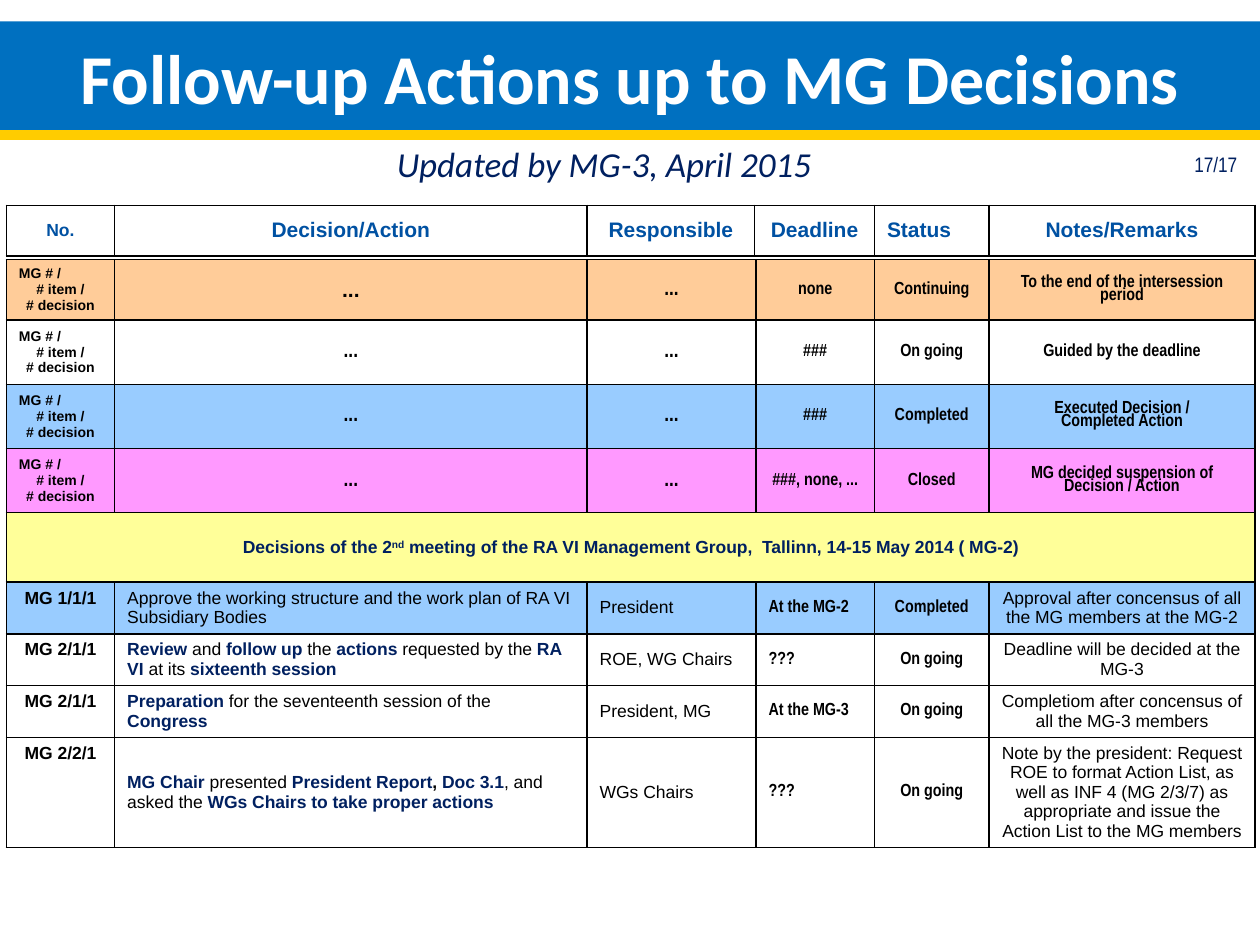
from dataclasses import dataclass
from lxml.etree import SubElement
from pptx import Presentation
from pptx.dml.color import RGBColor
from pptx.enum.shapes import MSO_CONNECTOR as Connector
from pptx.enum.text import MSO_ANCHOR as Anchor, MSO_AUTO_SIZE as AutoSize, PP_ALIGN as Align
from pptx.oxml.ns import qn
from pptx.util import Inches, Pt


@dataclass(frozen=True)
class Theme:
    navy: str = "002060"
    blue: str = "0070C0"
    heading: str = "0051A2"
    gold: str = "FFCC00"
    white: str = "FFFFFF"
    black: str = "000000"
    orange: str = "FFCC99"
    sky: str = "99CCFF"
    pink: str = "FF99FF"
    yellow: str = "FFFF99"
    sans: str = "Arial"
    narrow: str = "Arial Narrow"
    display: str = "Calibri"
    title: int = 40
    subtitle: int = 20
    large: int = 12
    body: int = 10
    small: int = 8


THEME = Theme()
PLAIN = dict(name=THEME.sans, size=THEME.body, bold=False, color=THEME.black)
STRONG = PLAIN | dict(bold=True)
KEY = STRONG | dict(color=THEME.navy)
TIGHT = STRONG | dict(name=THEME.narrow)
CODE = STRONG | dict(size=THEME.small)
DOTS = TIGHT | dict(size=THEME.large)
BIG_DOTS = STRONG | dict(size=THEME.large)
HEADER = STRONG | dict(size=THEME.large, color=THEME.heading)
CENTER = dict(alignment=Align.CENTER)
LEFT = dict(alignment=Align.LEFT)
DENSE = CENTER | dict(line_spacing=0.8)


@dataclass
class Cell:
    paragraphs: list
    anchor: Anchor = Anchor.MIDDLE


def line(text, style, layout=CENTER):
    return [(text, style)], layout


def cell(text, style, layout=CENTER, anchor=Anchor.MIDDLE):
    return Cell([line(part, style, layout) for part in text.split("\n")], anchor)


class SlideBuilder:
    columns, rows = 200, 150

    def __init__(self, deck, page):
        self.deck, self.page = deck, page

    def across(self, count):
        return round(self.deck.slide_width * count / self.columns)

    def down(self, count):
        return round(self.deck.slide_height * count / self.rows)

    def area(self, left, top, width, height):
        return self.across(left), self.down(top), self.across(width), self.down(height)

    def fill_text(self, frame, paragraphs):
        for index, (spans, layout) in enumerate(paragraphs):
            para = frame.add_paragraph() if index else frame.paragraphs[0]
            for attribute, value in layout.items():
                setattr(para, attribute, value)
            for text, style in spans:
                span = para.add_run()
                span.text = text
                for attribute, value in style.items():
                    if attribute == "color":
                        span.font.color.rgb = RGBColor.from_string(value)
                    elif attribute == "raised":
                        span.font._element.set("baseline", str(value * 1000))
                    else:
                        setattr(span.font, attribute, Pt(value) if attribute == "size" else value)

    def frame(self, box, paragraphs, anchor):
        settings = dict(word_wrap=True, auto_size=AutoSize.NONE, vertical_anchor=anchor)
        for attribute, value in settings.items():
            setattr(box.text_frame, attribute, value)
        self.fill_text(box.text_frame, paragraphs)

    def title(self, text, style, fill, *grid):
        box = self.page.shapes.title
        for attribute, value in zip(("left", "top", "width", "height"), self.area(*grid)):
            setattr(box, attribute, value)
        box.fill.solid()
        box.fill.fore_color.rgb = RGBColor.from_string(fill)
        self.frame(box, [line(text, style)], Anchor.MIDDLE)

    def text(self, text, style, layout, anchor, *grid):
        box = self.page.shapes.add_textbox(*self.area(*grid))
        self.frame(box, [line(text, style, layout)], anchor)

    def rule(self, color, weight, top):
        y = self.down(top)
        rule = self.page.shapes.add_connector(Connector.STRAIGHT, 0, y, self.deck.slide_width, y)
        rule.line.color.rgb = RGBColor.from_string(color)
        rule.line.width = Pt(weight)
        SubElement(rule._element.spPr, qn("a:effectLst"))

    def border(self, target):
        properties = target._tc.get_or_add_tcPr()
        for side in ("lnL", "lnR", "lnT", "lnB"):
            edge = SubElement(properties, qn(f"a:{side}"), w=str(Pt(1)))
            SubElement(SubElement(edge, qn("a:solidFill")), qn("a:srgbClr"), val=THEME.black)

    def table(self, left, top, widths, heights, records):
        grid = self.area(left, top, sum(widths), sum(heights))
        table = self.page.shapes.add_table(len(heights), len(widths), *grid).table
        table.first_row = table.horz_banding = False
        for column, width in zip(table.columns, widths):
            column.width = self.across(width)
        for row, height in zip(table.rows, heights):
            row.height = self.down(height)
        for row_index, (fill, contents) in enumerate(records):
            for target in table.rows[row_index].cells:
                self.border(target)
                if fill:
                    target.fill.solid()
                    target.fill.fore_color.rgb = RGBColor.from_string(fill)
                else:
                    target.fill.background()
            if len(contents) == 1:
                table.cell(row_index, 0).merge(table.cell(row_index, len(widths) - 1))
            for column_index, content in enumerate(contents):
                target = table.cell(row_index, column_index)
                target.vertical_anchor = content.anchor
                self.fill_text(target.text_frame, content.paragraphs)


def legend(fill, deadline, status, notes, dots=DOTS):
    code = Cell([line("MG # /", CODE, LEFT), line("# item /", CODE), line("# decision", CODE)])
    return fill, [code, cell("...", dots), cell("...", DOTS), cell(deadline, TIGHT),
                  cell(status, TIGHT), cell(notes, TIGHT, DENSE)]


def action(fill, number, spans, responsible, deadline, status, notes):
    return fill, [cell(number, STRONG, CENTER, Anchor.TOP), Cell([(spans, LEFT)]),
                  cell(responsible, PLAIN, LEFT), cell(deadline, TIGHT, LEFT),
                  cell(status, TIGHT), cell(notes, PLAIN, CENTER, Anchor.TOP)]


HEADINGS = [cell("No.", HEADER | dict(size=THEME.body)), cell("Decision/Action", HEADER),
            cell("Responsible", HEADER), cell("Deadline", HEADER),
            cell("Status", HEADER, LEFT), cell("Notes/Remarks", HEADER)]
MEETING = [("Decisions of the 2", KEY), ("nd", KEY | dict(raised=30)),
           (" meeting of the RA VI Management Group,  Tallinn, 14-15 May 2014 ( MG-2)", KEY)]
RECORDS = [
    legend(THEME.orange, "none", "Continuing", "To the end of the intersession period", BIG_DOTS),
    legend(None, "###", "On going", "Guided by the deadline"),
    legend(THEME.sky, "###", "Completed", "Executed Decision /\nCompleted Action"),
    legend(THEME.pink, "###, none, ...", "Closed", "MG decided suspension of Decision / Action"),
    (THEME.yellow, [Cell([(MEETING, CENTER)])]),
    action(THEME.sky, "MG 1/1/1",
           [("Approve the working structure and the work plan of RA VI Subsidiary Bodies", PLAIN)],
           "President", "At the MG-2", "Completed",
           "Approval after concensus of all the MG members at the MG-2"),
    action(None, "MG 2/1/1",
           [("Review", KEY), (" and ", PLAIN), ("follow up ", KEY), ("the ", PLAIN),
            ("actions", KEY), (" requested by the ", PLAIN), ("RA VI ", KEY),
            ("at its ", PLAIN), ("sixteenth session", KEY)],
           "ROE, WG Chairs", "???", "On going", "Deadline will be decided at the MG-3"),
    action(None, "MG 2/1/1",
           [("Preparation ", KEY), ("for the seventeenth session of the ", PLAIN),
            ("Congress", KEY)],
           "President, MG", "At the MG-3", "On going",
           "Completiom after concensus of all the MG-3 members"),
    action(None, "MG 2/2/1",
           [("MG Chair", KEY), (" presented ", PLAIN), ("President Report", KEY), (", ", STRONG),
            ("Doc 3.1", KEY), (", and asked the ", PLAIN),
            ("WGs Chairs to take proper actions", KEY)],
           "WGs Chairs", "???", "On going",
           "Note by the president: Request ROE to format Action List, as well as INF 4 (MG 2/3/7) "
           "as appropriate and issue the Action List to the MG members"),
]


def main():
    deck = Presentation()
    deck.slide_width, deck.slide_height = Inches(10), Inches(7.5)
    slide = SlideBuilder(deck, deck.slides.add_slide(deck.slide_layouts[5]))
    display = dict(name=THEME.display)
    slide.title("Follow-up Actions up to MG Decisions",
                display | dict(size=THEME.title, bold=True, color=THEME.white),
                THEME.blue, 0, 3.4, 200, 17.4)
    slide.rule(THEME.gold, 6, 21.4)
    slide.text("Updated by MG-3, April 2015",
               display | dict(size=THEME.subtitle, italic=True, color=THEME.navy),
               CENTER, Anchor.MIDDLE, 39.8, 23, 112.2, 5.8)
    slide.text("17/17", dict(name=THEME.narrow, size=THEME.large, color=THEME.navy),
               LEFT, Anchor.TOP, 187.6, 23, 11.6, 6.8)
    slide.table(1, 32.6, [17.2, 75, 26.6, 19, 18.2, 42.2], [8], [(THEME.white, HEADINGS)])
    slide.table(1, 41.2, [17.2, 75, 26.8, 18.8, 18.2, 42.2],
                [9.6] + [10.2] * 3 + [11] + [8.2] * 3 + [17.4], RECORDS)
    deck.save("out.pptx")


if __name__ == "__main__":
    main()
